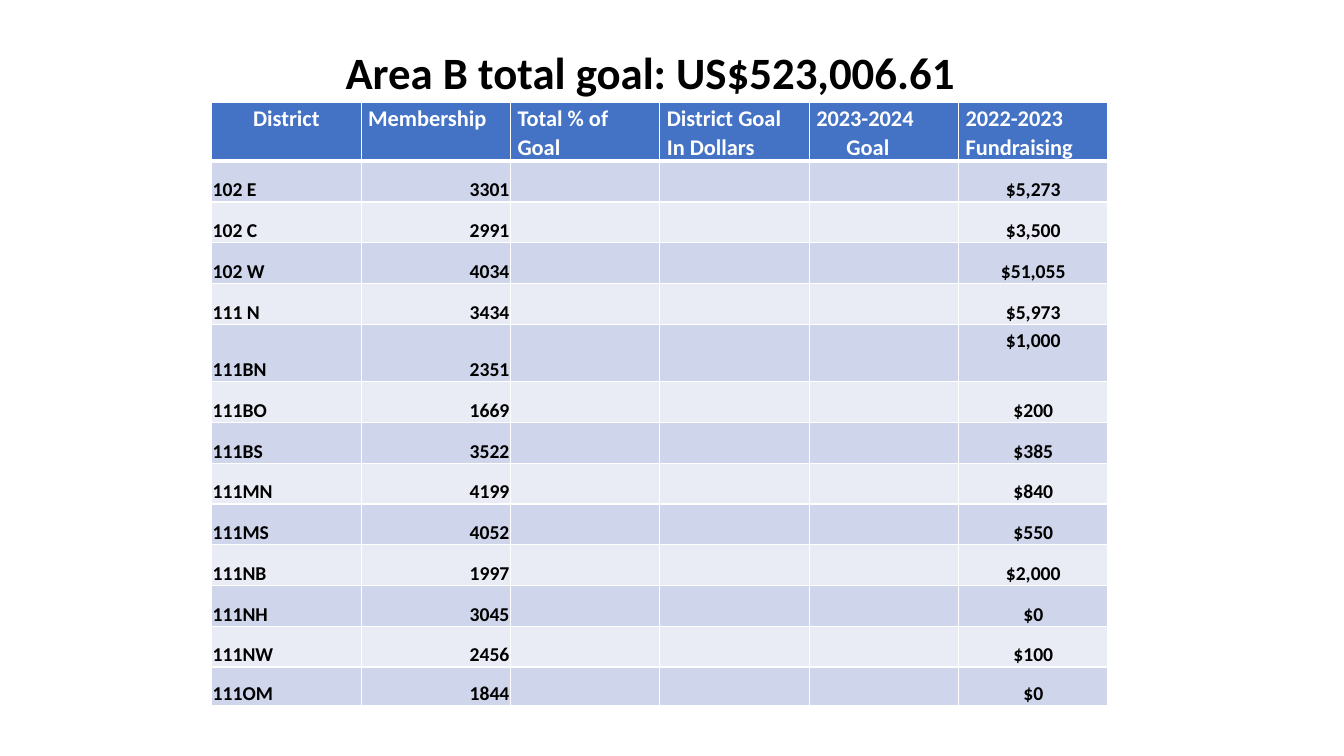
from lxml import etree
from pptx import Presentation
from pptx.dml.color import RGBColor
from pptx.enum.text import MSO_ANCHOR, PP_ALIGN
from pptx.oxml.ns import qn
from pptx.util import Inches, Pt

LEFT, CENTER, RIGHT = PP_ALIGN.LEFT, PP_ALIGN.CENTER, PP_ALIGN.RIGHT
TOP, BOTTOM = MSO_ANCHOR.TOP, MSO_ANCHOR.BOTTOM

# Content
TITLE = "Area B total goal: US$523,006.61"
HEADINGS = [
    ["District"], ["Membership"], ["Total % of Goal"],
    ["District Goal In Dollars"], ["2023-2024", "Goal"],
    ["2022-2023", "Fundraising"],
]
DISTRICTS = [
    ("102 E", "3301", "$5,273"),
    ("102 C", "2991", "$3,500"),
    ("102 W", "4034", "$51,055"),
    ("111 N", "3434", "$5,973"),
    ("111BN", "2351", "$1,000"),
    ("111BO", "1669", "$200"),
    ("111BS", "3522", "$385"),
    ("111MN", "4199", "$840"),
    ("111MS", "4052", "$550"),
    ("111NB", "1997", "$2,000"),
    ("111NH", "3045", "$0"),
    ("111NW", "2456", "$100"),
    ("111OM", "1844", "$0"),
]
TALL_DISTRICT = "111BN"

# Style and measures
FONT = "Calibri"
WHITE, BLACK, HEADER_BLUE = "FFFFFF", "000000", "4472C4"
BANDS = ("CFD5EA", "E9EBF5")
TABLE_LEFT, TABLE_TOP, TABLE_WIDTH, TABLE_HEIGHT = 2.1, 1.02, 8.89, 5.98
HEADER_HEIGHT, TALL_HEIGHT, LAST_HEIGHT = 0.58, 0.57, 0.38
REGULAR_HEIGHT = ((TABLE_HEIGHT - HEADER_HEIGHT - TALL_HEIGHT - LAST_HEIGHT)
                  / (len(DISTRICTS) - 2))
HEADER_MARGINS = (0.07, 0, 0.07, 0)
BODY_MARGINS = (0.01, 0.01, 0.01, 0)
TALL_MARGINS = (0.1, 0.05, 0.1, 0.05)


def color(value):
    return RGBColor.from_string(value)


def style(para, size, ink, align=LEFT, spacing=None):
    para.alignment = align
    if spacing:
        para.line_spacing = spacing
    font = para.font
    font.name, font.size, font.bold = FONT, Pt(size), True
    font.color.rgb = color(ink)


def set_borders(cell, top=1, bottom=1):
    properties = cell._tc.get_or_add_tcPr()
    widths = (("a:lnL", 1), ("a:lnR", 1), ("a:lnT", top), ("a:lnB", bottom))
    for index, (tag, width) in enumerate(widths):
        line = etree.Element(qn(tag), w=str(Pt(width)))
        fill = etree.SubElement(line, qn("a:solidFill"))
        etree.SubElement(fill, qn("a:srgbClr"), val=WHITE)
        properties.insert(index, line)


def format_cell(cell, fill, margins, anchor, top=1, bottom=1):
    (cell.margin_left, cell.margin_top,
     cell.margin_right, cell.margin_bottom) = map(Inches, margins)
    cell.vertical_anchor = anchor
    cell.fill.solid()
    cell.fill.fore_color.rgb = color(fill)
    set_borders(cell, top, bottom)


deck = Presentation()
deck.slide_width, deck.slide_height = Inches(13.33), Inches(7.5)
page = deck.slides.add_slide(deck.slide_layouts[6])

# Title
box = page.shapes.add_textbox(Inches(3.33), Inches(0.36), Inches(6.67), Inches(0.65))
box.text_frame.word_wrap = True
title = box.text_frame.paragraphs[0]
title.text = TITLE
title.space_after = Pt(8)
style(title, 32, BLACK, spacing=1.07)

# Table grid
table = page.shapes.add_table(
    len(DISTRICTS) + 1, len(HEADINGS), Inches(TABLE_LEFT), Inches(TABLE_TOP),
    Inches(TABLE_WIDTH), Inches(TABLE_HEIGHT)).table
table.first_row = table.horz_banding = False
for column in table.columns:
    column.width = Inches(TABLE_WIDTH / len(HEADINGS))

# Header row
table.rows[0].height = Inches(HEADER_HEIGHT)
for cell, lines in zip(table.rows[0].cells, HEADINGS):
    format_cell(cell, HEADER_BLUE, HEADER_MARGINS, TOP, bottom=3)
    cell.text = "\n".join(lines)
    for para in cell.text_frame.paragraphs:
        if para.text == "Goal":
            para._p.get_or_add_pPr().set("marL", str(Inches(0.3)))
        style(para, 16, WHITE, CENTER if para.text == "District" else LEFT, 1.07)

# District rows
for number, (district, members, raised) in enumerate(DISTRICTS, start=1):
    row = table.rows[number]
    tall = district == TALL_DISTRICT
    last = number == len(DISTRICTS)
    row.height = Inches(TALL_HEIGHT if tall else LAST_HEIGHT if last else REGULAR_HEIGHT)
    values = (district, members, "", "", "", raised)
    aligns = (LEFT, RIGHT, LEFT, LEFT, LEFT, CENTER)
    for cell, value, align in zip(row.cells, values, aligns):
        raised_high = tall and value == raised
        format_cell(cell, BANDS[(number - 1) % 2],
                    TALL_MARGINS if raised_high else BODY_MARGINS,
                    TOP if raised_high else BOTTOM, top=3 if number == 1 else 1)
        cell.text = value
        style(cell.text_frame.paragraphs[0], 14, BLACK, align)

deck.save("out.pptx")
